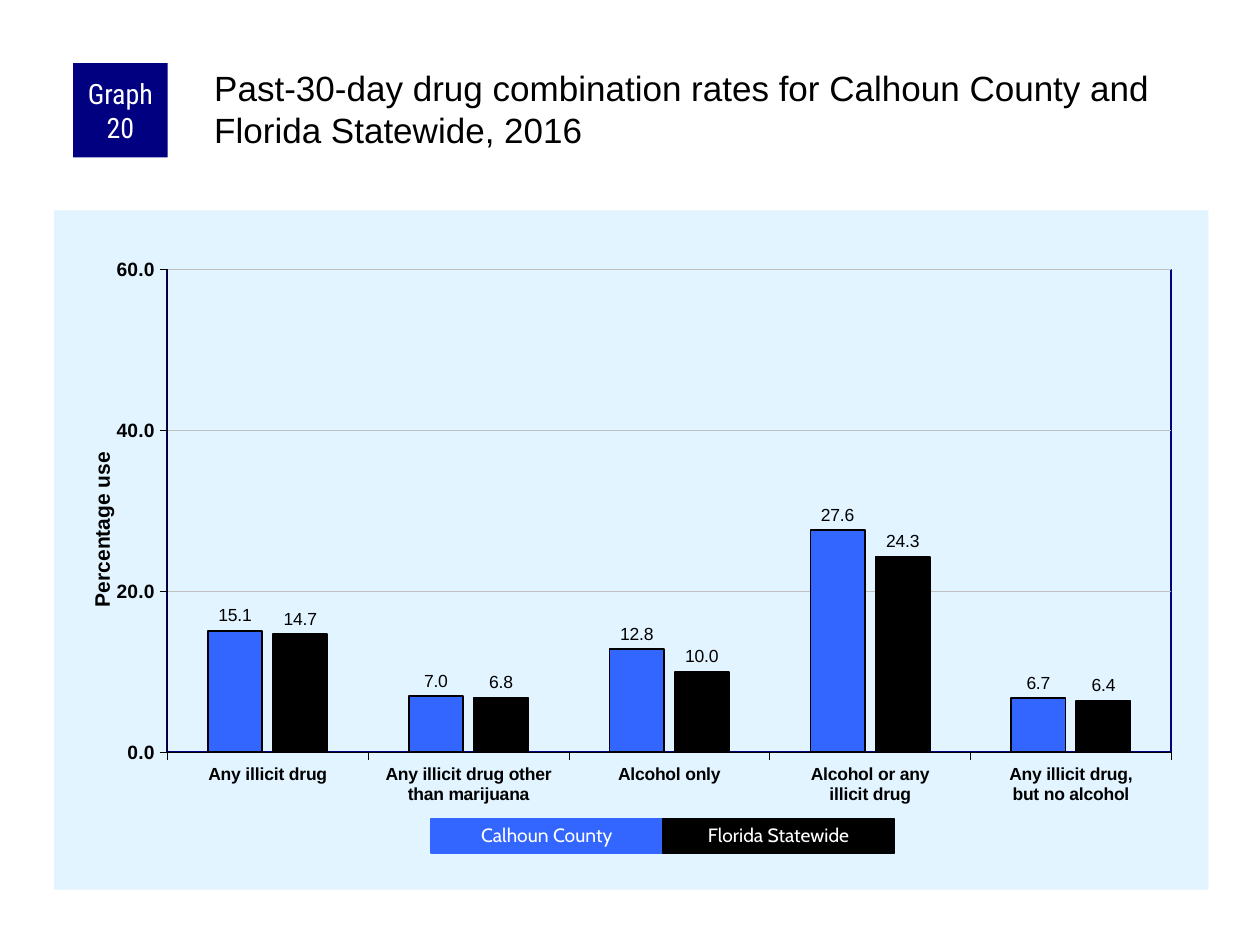
from dataclasses import dataclass

from lxml.etree import fromstring
from pptx import Presentation
from pptx.chart.data import CategoryChartData
from pptx.dml.color import RGBColor as RGB
from pptx.enum.chart import XL_CHART_TYPE as Kind, XL_LABEL_POSITION as Pos, XL_TICK_MARK as Tick
from pptx.enum.shapes import MSO_SHAPE as Form
from pptx.enum.text import MSO_ANCHOR as Anchor, PP_ALIGN as Align
from pptx.oxml.ns import nsdecls, qn
from pptx.util import Inches, Pt


@dataclass(frozen=True)
class Theme:
    """Colours, fonts and type sizes."""
    navy: str = "000080"
    blue: str = "3366FF"
    black: str = "000000"
    white: str = "FFFFFF"
    pale: str = "E1F4FF"
    grid: str = "C0C0C0"
    body: str = "Arial"
    tag: str = "Roboto Condensed"
    key: str = "Cabin"
    head_size: float = 20
    tag_size: float = 16
    name_size: float = 12
    axis_size: float = 11
    label_size: float = 10


T = Theme()
GROUPS = [("Calhoun County", T.blue, (15.1, 7.0, 12.8, 27.6, 6.7)),
          ("Florida Statewide", T.black, (14.7, 6.8, 10.0, 24.3, 6.4))]
CATS = ["Any illicit drug", "Any illicit drug other than marijuana", "Alcohol only",
        "Alcohol or any\nillicit drug", "Any illicit drug,\nbut no alcohol"]


def style(font, face, size, color, bold=False):
    """Set the look of a font."""
    font.name, font.size, font.bold = face, Pt(size), bold
    font.color.rgb = RGB.from_string(color)


def stroke(line, color, width):
    """Give a line a colour and a width."""
    line.color.rgb = RGB.from_string(color)
    line.width = Pt(width)


def block(slide, box, text, fill, face, size):
    """Draw a filled rectangle with centred white text."""
    shape = slide.shapes.add_shape(Form.RECTANGLE, *map(Inches, box))
    shape.shadow.inherit = False
    shape.fill.solid()
    shape.fill.fore_color.rgb = RGB.from_string(fill)
    shape.line.fill.background()
    frame = shape.text_frame
    frame.word_wrap, frame.vertical_anchor = True, Anchor.MIDDLE
    frame.margin_left = frame.margin_right = Inches(0.05)
    frame.margin_top = frame.margin_bottom = 0
    frame.text = text
    para = frame.paragraphs[0]
    para.alignment = Align.CENTER
    style(para.runs[0].font, face, size, T.white)
    return shape


def header(slide, box):
    """Place the graph number and the title."""
    left, top, width, height = box
    block(slide, (left, top, 0.75, 0.75), "Graph 20", T.navy, T.tag, T.tag_size)
    area = (left + 1.09, top, width - 1.09, height)
    frame = slide.shapes.add_textbox(*map(Inches, area)).text_frame
    frame.word_wrap = True
    frame.margin_left = frame.margin_top = Inches(0.03)
    frame.margin_right = frame.margin_bottom = 0
    frame.text = "Past-30-day drug combination rates for Calhoun County and Florida Statewide, 2016"
    style(frame.paragraphs[0].runs[0].font, T.body, T.head_size, T.black)


def layout(**parts):
    """Make a manual chart layout from fractions of the chart."""
    inner = '<c:layoutTarget val="inner"/>' if "w" in parts else ""
    modes = "".join(f'<c:{key}Mode val="edge"/>' for key in "xy")
    sizes = "".join(f'<c:{key} val="{val}"/>' for key, val in parts.items())
    return fromstring(f'<c:layout {nsdecls("c")}><c:manualLayout>{inner}{modes}{sizes}'
                      '</c:manualLayout></c:layout>')


def paint(fill, line):
    """Make chart area properties from fill and line markup."""
    return fromstring(f'<c:spPr {nsdecls("c", "a")}>{fill}{line}</c:spPr>')


def solid(color):
    """Return solid fill markup."""
    return f'<a:solidFill><a:srgbClr val="{color}"/></a:solidFill>'


def axes(chart):
    """Format both axes and the value title."""
    cat, val = chart.category_axis, chart.value_axis
    for axis, size in ((cat, T.label_size), (val, T.axis_size)):
        axis.major_tick_mark, axis.minor_tick_mark = Tick.OUTSIDE, Tick.NONE
        stroke(axis.format.line, T.black, 0.25)
        style(axis.tick_labels.font, T.body, size, T.black, True)
    val.minimum_scale, val.maximum_scale, val.major_unit = 0, 60, 20
    stroke(val.major_gridlines.format.line, T.grid, 0.25)
    title = val.axis_title
    title.text_frame.text = "Percentage use"
    style(title.text_frame.paragraphs[0].runs[0].font, T.body, T.name_size, T.black, True)
    node = title._element
    body = next(node.iter(qn("a:bodyPr")))
    body.set("rot", "-5400000")
    body.set("vert", "horz")
    for old in node.findall(qn("c:layout")):
        node.remove(old)
    node.find(qn("c:tx")).addnext(layout(x=0.027, y=0.35))


def graph(slide, box):
    """Place the column chart on its pale panel."""
    data = CategoryChartData(number_format="0.0")
    data.categories = CATS
    for name, _, vals in GROUPS:
        data.add_series(name, vals)
    chart = slide.shapes.add_chart(Kind.COLUMN_CLUSTERED, *map(Inches, box), data).chart
    chart.has_legend = chart.has_title = False
    style(chart.font, T.body, T.axis_size, T.black)
    plot = chart.plots[0]
    plot.gap_width, plot.overlap, plot.vary_by_categories = 150, -20, False
    for series, (_, color, _) in zip(plot.series, GROUPS):
        series.format.fill.solid()
        series.format.fill.fore_color.rgb = RGB.from_string(color)
        stroke(series.format.line, T.black, 1)
        labels = series.data_labels
        labels.show_value, labels.position = True, Pos.OUTSIDE_END
        labels.number_format, labels.number_format_is_linked = "0.0", False
        style(labels.font, T.body, T.label_size, T.black)
    axes(chart)
    root = chart.element.find(qn("c:chart"))
    area = root.find(qn("c:plotArea"))
    for old in area.findall(qn("c:layout")):
        area.remove(old)
    area.insert(0, layout(x=0.098, y=0.087, w=0.87, h=0.711))
    area.append(paint("<a:noFill/>", f'<a:ln w="{Pt(1)}">{solid(T.navy)}</a:ln>'))
    root.addnext(paint(solid(T.pale), "<a:ln><a:noFill/></a:ln>"))


def legend(slide, box):
    """Place one key block per group, side by side."""
    left, top, width, height = box
    step = width / len(GROUPS)
    for num, (name, color, _) in enumerate(GROUPS):
        area = (left + num * step, top, step, height)
        shape = block(slide, area, name, color, T.key, T.axis_size)
        stroke(shape.line, color, 0.75)
        shape.text_frame.paragraphs[0].line_spacing = 0.9


def main():
    """Build and save the slide."""
    deck = Presentation()
    deck.slide_width, deck.slide_height = Inches(10), Inches(7.5)
    slide = deck.slides.add_slide(deck.slide_layouts[6])
    graph(slide, (0.43, 1.67, 9.16, 5.39))
    header(slide, (0.58, 0.5, 9.01, 0.83))
    legend(slide, (3.42, 6.5, 3.68, 0.27))
    deck.save("out.pptx")


if __name__ == "__main__":
    main()
